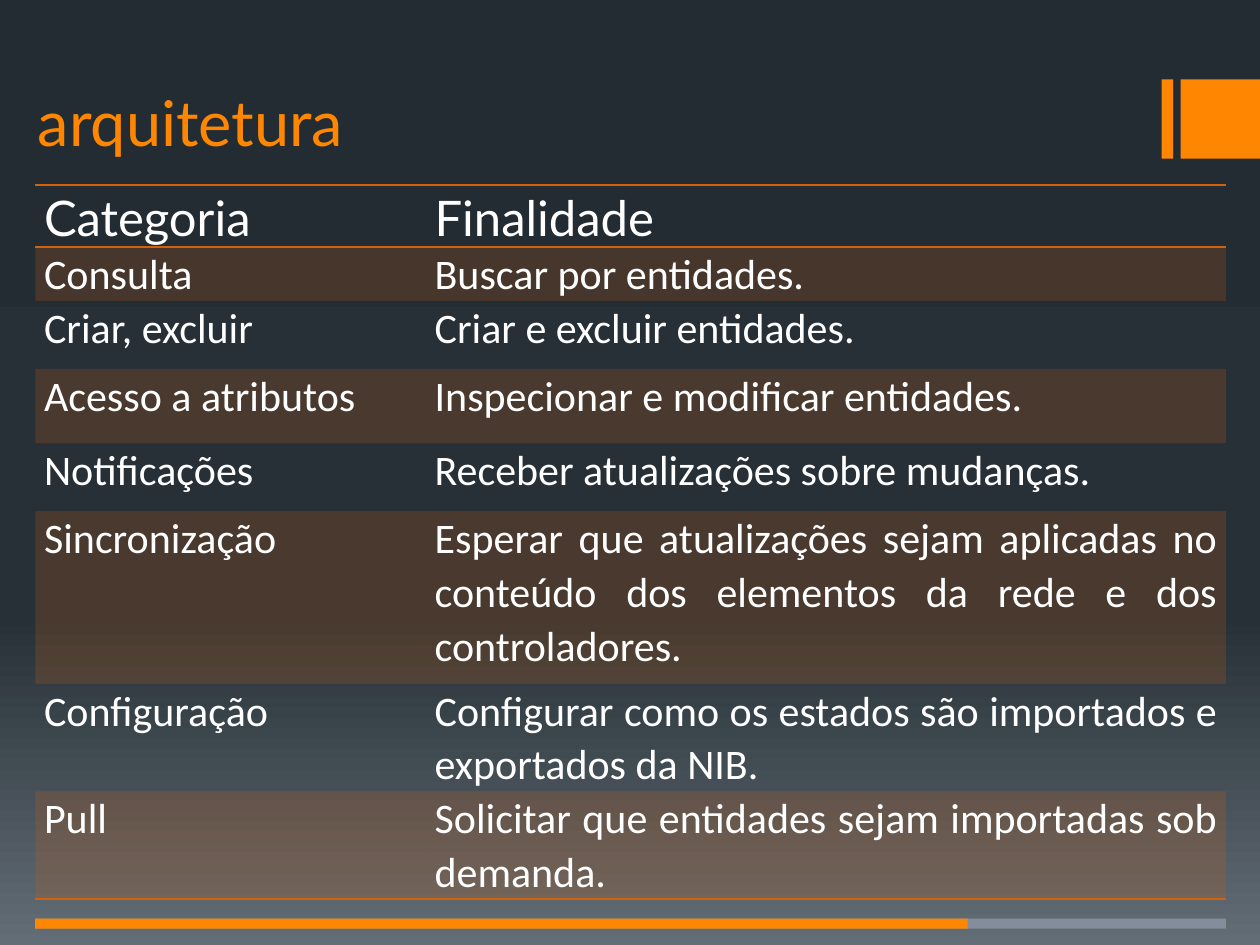
from dataclasses import dataclass

from lxml.etree import SubElement as Sub
from pptx import Presentation
from pptx.dml.color import RGBColor as Rgb
from pptx.enum.shapes import MSO_SHAPE as Shape
from pptx.enum.text import MSO_ANCHOR as Anchor, PP_ALIGN as Align
from pptx.oxml import parse_xml
from pptx.oxml.ns import nsdecls, qn
from pptx.util import Inches, Pt


@dataclass(frozen=True)
class Theme:
    accent: str = "FF8600"
    track: str = "838D9B"
    rust: str = "D2610C"
    text: str = "FFFFFF"
    back: tuple = ((0, "242C33"), (65, "273037"), (100, "636D76"))
    band: int = 20  # opacity of banded rows, percent
    head_font: str = "Lato"
    body_font: str = "Calibri"
    title: int = 36
    head: int = 28
    body: int = 24


@dataclass(frozen=True)
class Bar:
    left: float
    top: float
    width: float
    height: float
    color: str


@dataclass(frozen=True)
class Row:
    height: float
    label: str
    goal: str


THEME = Theme()
LEFT, WIDTH = 0.28, 9.45

BARS = (
    Bar(9.22, 0.63, 0.09, 0.63, THEME.accent),
    Bar(9.37, 0.63, 0.63, 0.63, THEME.accent),
    Bar(LEFT, 7.29, WIDTH, 0.08, THEME.track),
    Bar(LEFT, 7.29, 7.4, 0.08, THEME.accent),
)

COLS = (3.1, 6.35)
ROWS = (
    Row(0.3, "Categoria", "Finalidade"),
    Row(0.3, "Consulta", "Buscar por entidades."),
    Row(0.54, "Criar, excluir", "Criar e excluir entidades."),
    Row(0.59, "Acesso a atributos", "Inspecionar e modificar entidades."),
    Row(0.54, "Notificações", "Receber atualizações sobre mudanças."),
    Row(1.37, "Sincronização", "Esperar que atualizações sejam aplicadas no "
        "conteúdo dos elementos da rede e dos controladores."),
    Row(0.82, "Configuração", "Configurar como os estados são importados e "
        "exportados da NIB."),
    Row(0.82, "Pull", "Solicitar que entidades sejam importadas sob demanda."),
)


def paint_back(slide) -> None:
    """Fill the background with a vertical gradient."""
    slide.background.fill.solid()
    frame = slide.element.find(".//" + qn("p:bgPr"))
    stops = "".join(
        f'<a:gs pos="{pos * 1000}"><a:srgbClr val="{color}"/></a:gs>'
        for pos, color in THEME.back)
    frame.replace(frame[0], parse_xml(
        f'<a:gradFill {nsdecls("a")} rotWithShape="1"><a:gsLst>{stops}</a:gsLst>'
        '<a:lin ang="5400000" scaled="0"/></a:gradFill>'))


def add_run(para, text: str, size: int, font: str, color: str) -> None:
    run = para.add_run()
    run.text = text
    run.font.size = Pt(size)
    run.font.name = font
    run.font.color.rgb = Rgb.from_string(color)


def add_title(slide, text: str) -> None:
    title = slide.shapes.title
    title.left, title.top = Inches(0.2), Inches(0.6)
    title.width, title.height = Inches(8), Inches(0.71)
    title.text_frame.vertical_anchor = Anchor.BOTTOM
    para = title.text_frame.paragraphs[0]
    para.alignment = Align.LEFT
    add_run(para, text, THEME.title, THEME.head_font, THEME.accent)


def add_bar(slide, bar: Bar) -> None:
    box = slide.shapes.add_shape(
        Shape.RECTANGLE, Inches(bar.left), Inches(bar.top),
        Inches(bar.width), Inches(bar.height))
    box.shadow.inherit = False
    box.fill.solid()
    box.fill.fore_color.rgb = Rgb.from_string(bar.color)
    box.line.fill.background()


def add_edge(cell, side: str) -> None:
    """Rule one side of a cell; the top must be ruled after the bottom."""
    props = cell._tc.get_or_add_tcPr()
    props.insert(0, parse_xml(
        f'<a:{side} {nsdecls("a")} w="12700"><a:solidFill>'
        f'<a:srgbClr val="{THEME.rust}"/></a:solidFill></a:{side}>'))


def fill_cell(cell, text: str, index: int) -> None:
    cell.margin_left = cell.margin_right = Inches(0.07)
    cell.margin_top = cell.margin_bottom = 0
    para = cell.text_frame.paragraphs[0]
    para.alignment = Align.JUSTIFY
    para.line_spacing = 1.05
    head = index == 0
    add_run(para, text, THEME.head if head else THEME.body,
            THEME.head_font if head else THEME.body_font, THEME.text)

    # Odd rows carry a clear band of colour
    if index % 2:
        cell.fill.solid()
        cell.fill.fore_color.rgb = Rgb.from_string(THEME.rust)
        tint = cell._tc.tcPr.find(".//" + qn("a:srgbClr"))
        Sub(tint, qn("a:alpha"), val=str(THEME.band * 1000))
    else:
        cell.fill.background()

    # Rules frame the head row and close the table
    if index in (0, len(ROWS) - 1):
        add_edge(cell, "lnB")
    if head:
        add_edge(cell, "lnT")


def add_grid(slide) -> None:
    high = sum(row.height for row in ROWS)
    table = slide.shapes.add_table(
        len(ROWS), len(COLS), Inches(LEFT), Inches(1.47),
        Inches(WIDTH), Inches(high)).table
    table.first_row = table.horz_banding = False
    style = table._tbl.tblPr.find(qn("a:tableStyleId"))
    style.text = "{2D5ABB26-0587-4C30-8999-92F81FD0307C}"  # no style, no grid
    for col, width in zip(table.columns, COLS):
        col.width = Inches(width)
    for index, row in enumerate(ROWS):
        table.rows[index].height = Inches(row.height)
        for col, text in enumerate((row.label, row.goal)):
            fill_cell(table.cell(index, col), text, index)


def main() -> None:
    deck = Presentation()
    deck.slide_width, deck.slide_height = Inches(10), Inches(7.5)
    slide = deck.slides.add_slide(deck.slide_layouts[5])
    paint_back(slide)
    add_title(slide, "arquitetura")
    for bar in BARS:
        add_bar(slide, bar)
    add_grid(slide)
    deck.save("out.pptx")


if __name__ == "__main__":
    main()
